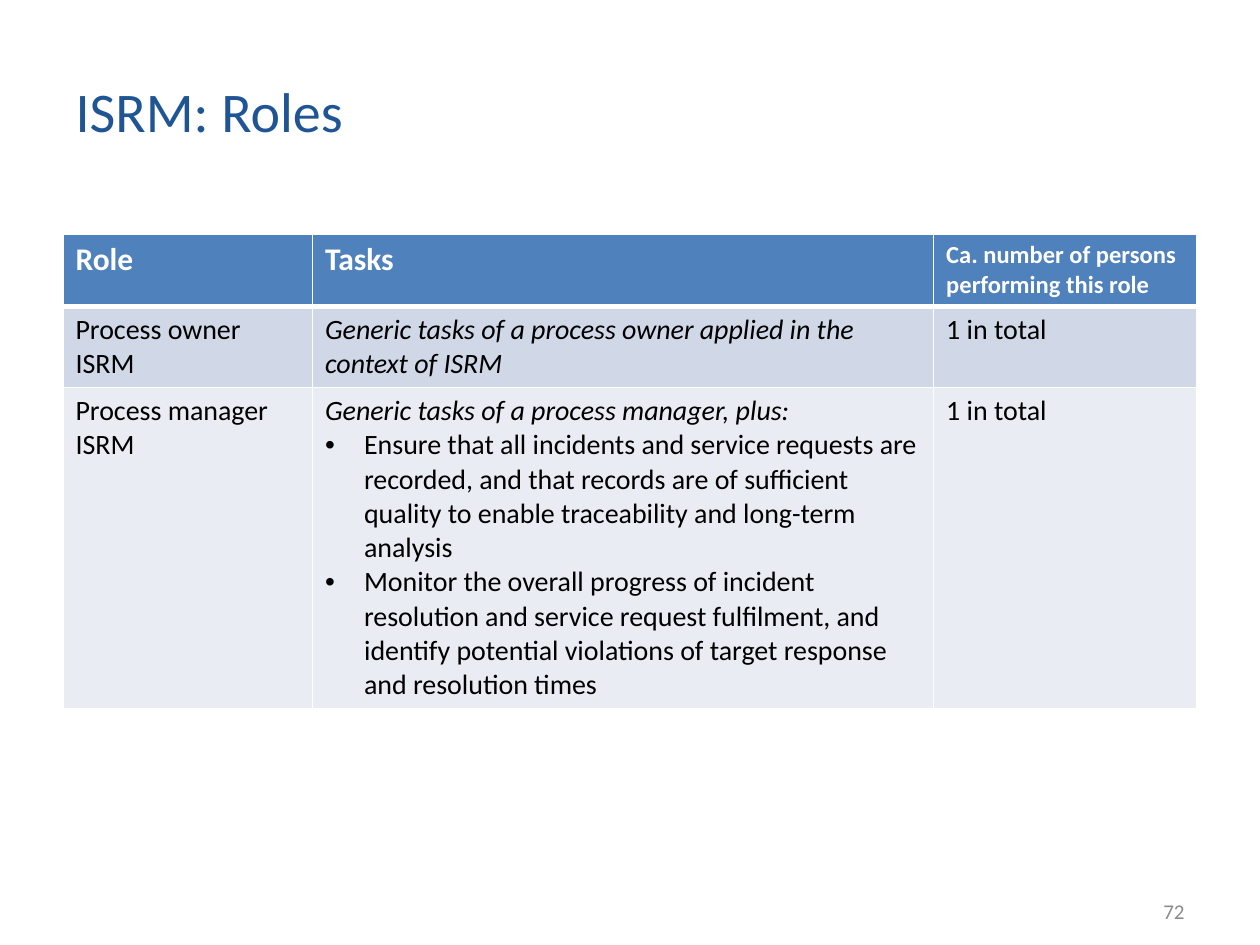
"""Build the ISRM roles slide with its table of roles, tasks and headcount."""
from lxml.etree import SubElement
from pptx import Presentation
from pptx.dml.color import RGBColor
from pptx.enum.text import MSO_ANCHOR, PP_ALIGN
from pptx.oxml.ns import qn
from pptx.util import Inches, Pt

TITLE = "ISRM: Roles"
PAGE_NUMBER = "72"
HEADERS = [("Role", 18), ("Tasks", 18), ("Ca. number of persons performing this role", 14)]
ROLES = [
    ("Process owner ISRM",
     "Generic tasks of a process owner applied in the context of ISRM", [],
     "1 in total"),
    ("Process manager ISRM",
     "Generic tasks of a process manager, plus:",
     ["Ensure that all incidents and service requests are recorded, and that records are "
      "of sufficient quality to enable traceability and long-term analysis",
      "Monitor the overall progress of incident resolution and service request fulfilment, "
      "and identify potential violations of target response and resolution times"],
     "1 in total"),
]
COLUMN_WIDTHS = [1.98, 4.93, 2.09]
ROW_HEIGHTS = [0.56, 0.64, 2.55]

FONT = "Calibri"
BLUE = RGBColor(0x20, 0x55, 0x95)
HEADER_FILL = RGBColor(0x4F, 0x81, 0xBD)
ROW_FILLS = [RGBColor(0xD0, 0xD8, 0xE7), RGBColor(0xE9, 0xEC, 0xF3)]
WHITE = RGBColor(0xFF, 0xFF, 0xFF)
BLACK = RGBColor(0, 0, 0)
GRAY = RGBColor(0x8B, 0x8B, 0x8B)
THIN, THICK = 0.96, 3


def write(paragraph, text, size, color, bold=False, italic=False):
    paragraph.text = text
    for run in paragraph.runs:
        font = run.font
        font.name, font.size, font.bold, font.italic = FONT, Pt(size), bold, italic
        font.color.rgb = color


def add_bullet(paragraph):
    properties = paragraph._p.get_or_add_pPr()
    properties.set("marL", str(Inches(0.31)))
    properties.set("indent", str(-Inches(0.31)))
    SubElement(properties, qn("a:buFont"), typeface="Arial")
    SubElement(properties, qn("a:buChar"), char="•")


def style_cell(cell, fill, top=THIN, bottom=THIN):
    properties = cell._tc.get_or_add_tcPr()
    for side, width in (("L", THIN), ("R", THIN), ("T", top), ("B", bottom)):
        line = SubElement(properties, qn(f"a:ln{side}"), w=str(Pt(width)))
        SubElement(SubElement(line, qn("a:solidFill")), qn("a:srgbClr"), val=str(WHITE))
    cell.fill.solid()
    cell.fill.fore_color.rgb = fill


def add_roles_table(slide):
    table = slide.shapes.add_table(
        len(ROW_HEIGHTS), len(COLUMN_WIDTHS), Inches(0.5), Inches(1.86),
        Inches(sum(COLUMN_WIDTHS)), Inches(sum(ROW_HEIGHTS))).table
    for column, width in zip(table.columns, COLUMN_WIDTHS):
        column.width = Inches(width)
    for row, height in zip(table.rows, ROW_HEIGHTS):
        row.height = Inches(height)

    for cell, (text, size) in zip(table.rows[0].cells, HEADERS):
        style_cell(cell, HEADER_FILL, bottom=THICK)
        write(cell.text_frame.paragraphs[0], text, size, WHITE, bold=True)

    for index, (role, summary, tasks, persons) in enumerate(ROLES):
        cells = list(table.rows[index + 1].cells)
        for column, (cell, text) in enumerate(zip(cells, (role, summary, persons))):
            style_cell(cell, ROW_FILLS[index], top=THIN if index else THICK)
            write(cell.text_frame.paragraphs[0], text, 16, BLACK, italic=column == 1)
        for task in tasks:
            paragraph = cells[1].text_frame.add_paragraph()
            add_bullet(paragraph)
            write(paragraph, task, 16, BLACK)


def main():
    presentation = Presentation()
    presentation.slide_width, presentation.slide_height = Inches(10), Inches(7.5)
    slide = presentation.slides.add_slide(presentation.slide_layouts[5])

    title = slide.shapes.title
    title.left, title.top, title.width, title.height = map(Inches, (0.5, 0.3, 8.04, 1.15))
    title.text_frame.vertical_anchor = MSO_ANCHOR.MIDDLE
    heading = title.text_frame.paragraphs[0]
    write(heading, TITLE, 32, BLUE)
    heading.alignment = PP_ALIGN.LEFT

    add_roles_table(slide)

    number_box = slide.shapes.add_textbox(*map(Inches, (7.17, 7.03, 2.33, 0.4)))
    number_box.text_frame.word_wrap = True
    number_box.text_frame.vertical_anchor = MSO_ANCHOR.MIDDLE
    number = number_box.text_frame.paragraphs[0]
    write(number, PAGE_NUMBER, 12, GRAY)
    number.alignment = PP_ALIGN.RIGHT

    presentation.save("out.pptx")


if __name__ == "__main__":
    main()
